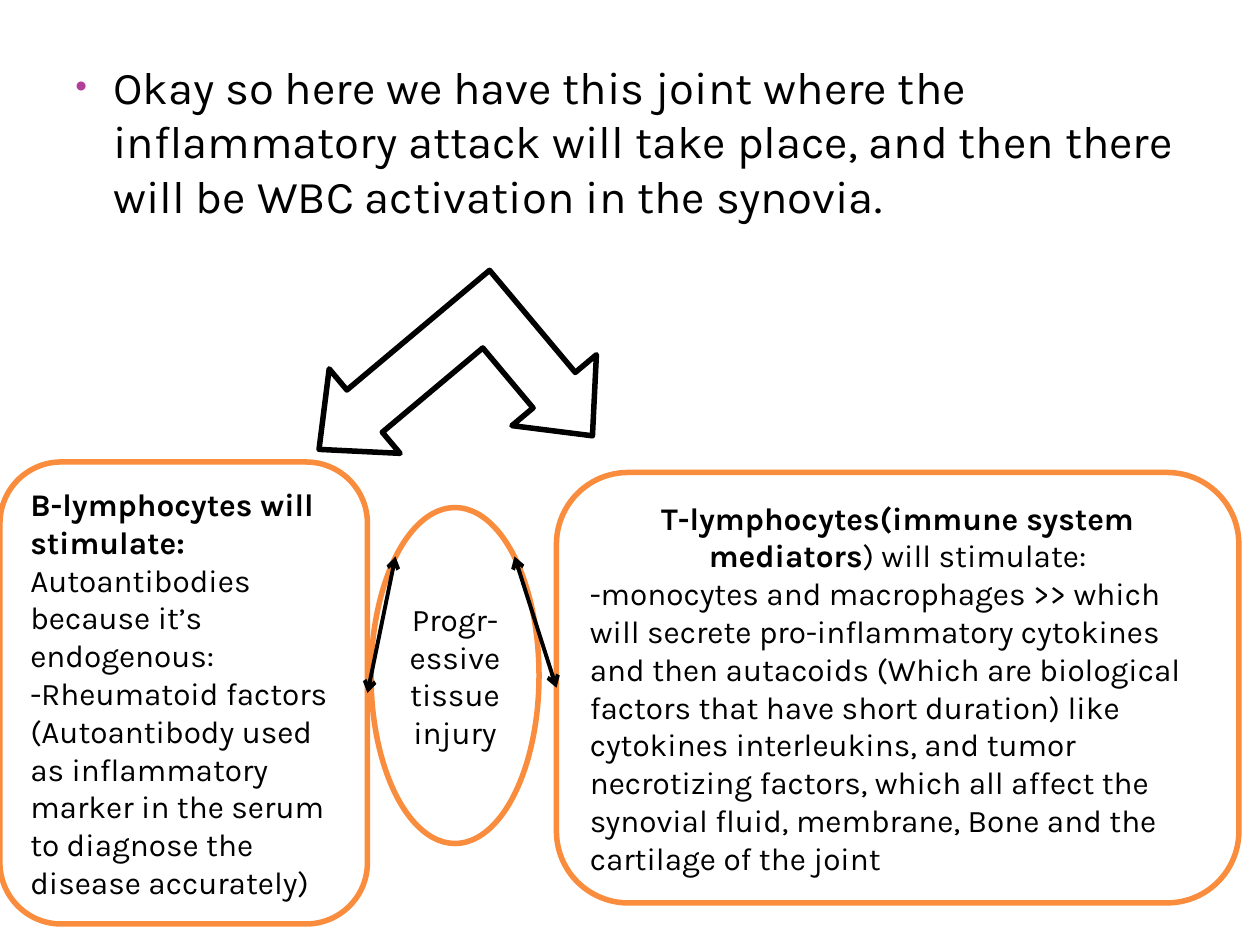
import pptx
import pptx.dml.color
import pptx.enum.shapes
import pptx.enum.text
import pptx.oxml.ns
import pptx.util
from lxml import etree

Pt = pptx.util.Pt
SHAPE = pptx.enum.shapes.MSO_SHAPE
ALIGN = pptx.enum.text.PP_ALIGN
ANCHOR = pptx.enum.text.MSO_ANCHOR
COLORS = {"paper": "FFFFFF", "ink": "000000", "frame": "FA8D3D", "bullet": "B13F9A"}


def add_element(parent, tag, **attributes):
    return etree.SubElement(parent, pptx.oxml.ns.qn(tag), attributes)


class SlideBuilder:
    """Holds the slide style and draws each kind of element on the page."""

    font = "Karla"
    outline = 3.15

    def __init__(self, page):
        self.page = page

    def color(self, name):
        return pptx.dml.color.RGBColor.from_string(COLORS[name])

    def add_span(self, para, text, size, bold=False):
        span = para.add_run()
        span.text = text
        span.font.name = self.font
        span.font.size = Pt(size)
        span.font.bold = bold
        span.font.color.rgb = self.color("ink")

    def bullet_text(self, bounds, text, size, indent):
        box = self.page.shapes.add_textbox(*map(Pt, bounds))
        box.text_frame.word_wrap = True
        para = box.text_frame.paragraphs[0]
        properties = para._p.get_or_add_pPr()
        properties.set("marL", str(Pt(indent)))
        properties.set("indent", str(-Pt(indent)))
        tint = add_element(properties, "a:buClr")
        add_element(tint, "a:srgbClr", val=COLORS["bullet"])
        add_element(properties, "a:buSzPct", val="73000")
        add_element(properties, "a:buFont", typeface="Arial")
        add_element(properties, "a:buChar", char="•")
        self.add_span(para, text, size)

    def shape(self, kind, bounds, line, paragraphs=()):
        shape = self.page.shapes.add_shape(kind, *map(Pt, bounds))
        shape.shadow.inherit = False
        shape.fill.solid()
        shape.fill.fore_color.rgb = self.color("paper")
        shape.line.color.rgb = self.color(line)
        shape.line.width = Pt(self.outline)
        frame = shape.text_frame
        frame.word_wrap = True
        frame.vertical_anchor = ANCHOR.MIDDLE
        for index, (align, spans) in enumerate(paragraphs):
            para = frame.add_paragraph() if index else frame.paragraphs[0]
            para.alignment = align
            for text, bold in spans:
                self.add_span(para, text, 18, bold)
        return shape

    def double_arrow(self, start, end):
        line = self.page.shapes.add_connector(
            pptx.enum.shapes.MSO_CONNECTOR.STRAIGHT, *map(Pt, start + end))
        line.line.color.rgb = self.color("ink")
        line.line.width = Pt(2.25)
        stroke = line.line._get_or_add_ln()
        for tag in ("a:headEnd", "a:tailEnd"):
            add_element(stroke, tag, type="arrow")
        add_element(line._element.spPr, "a:effectLst")
        return line


def main():
    deck = pptx.Presentation()
    deck.slide_width, deck.slide_height = Pt(720), Pt(540)
    builder = SlideBuilder(deck.slides.add_slide(deck.slide_layouts[6]))

    builder.bullet_text(
        (36, 30, 660, 356.4),
        "Okay so here we have this joint where the inflammatory attack will take place, "
        "and then there will be WBC activation in the synovia.", 26, 21.6)

    fork = builder.shape(SHAPE.LEFT_UP_ARROW, (199.4, 152.6, 126, 156.2), "ink")
    fork.rotation = 230
    for index, value in enumerate((0.25, 0.25, 0.27)):
        fork.adjustments[index] = value

    b_cells = builder.shape(SHAPE.ROUNDED_RECTANGLE, (0, 264, 210, 264), "frame", [
        (ALIGN.LEFT, [("B-lymphocytes will stimulate:", True)]),
        (ALIGN.LEFT, [("Autoantibodies because it’s endogenous:", False)]),
        (ALIGN.LEFT, [("-Rheumatoid factors (Autoantibody used as inflammatory marker "
                       "in the serum to diagnose the disease accurately)", False)]),
    ])
    t_cells = builder.shape(SHAPE.ROUNDED_RECTANGLE, (318, 270, 390, 246), "frame", [
        (ALIGN.CENTER, [("T-lymphocytes(immune system mediators", True),
                        (") will stimulate:", False)]),
        (ALIGN.LEFT, [("-monocytes and macrophages >> which will secrete pro-inflammatory "
                       "cytokines and then autacoids (Which are biological factors that "
                       "have short duration) like cytokines interleukins, and tumor "
                       "necrotizing factors, which all affect the synovial fluid, "
                       "membrane, Bone and the cartilage of the joint", False)]),
    ])
    builder.shape(SHAPE.OVAL, (212, 290, 96, 192), "frame", [
        (ALIGN.CENTER, [("Progr-essive tissue injury", False)]),
    ])

    builder.double_arrow((210, 396), (226, 318)).begin_connect(b_cells, 3)
    builder.double_arrow((294, 318), (318, 393)).end_connect(t_cells, 1)
    deck.save("out.pptx")


if __name__ == "__main__":
    main()
